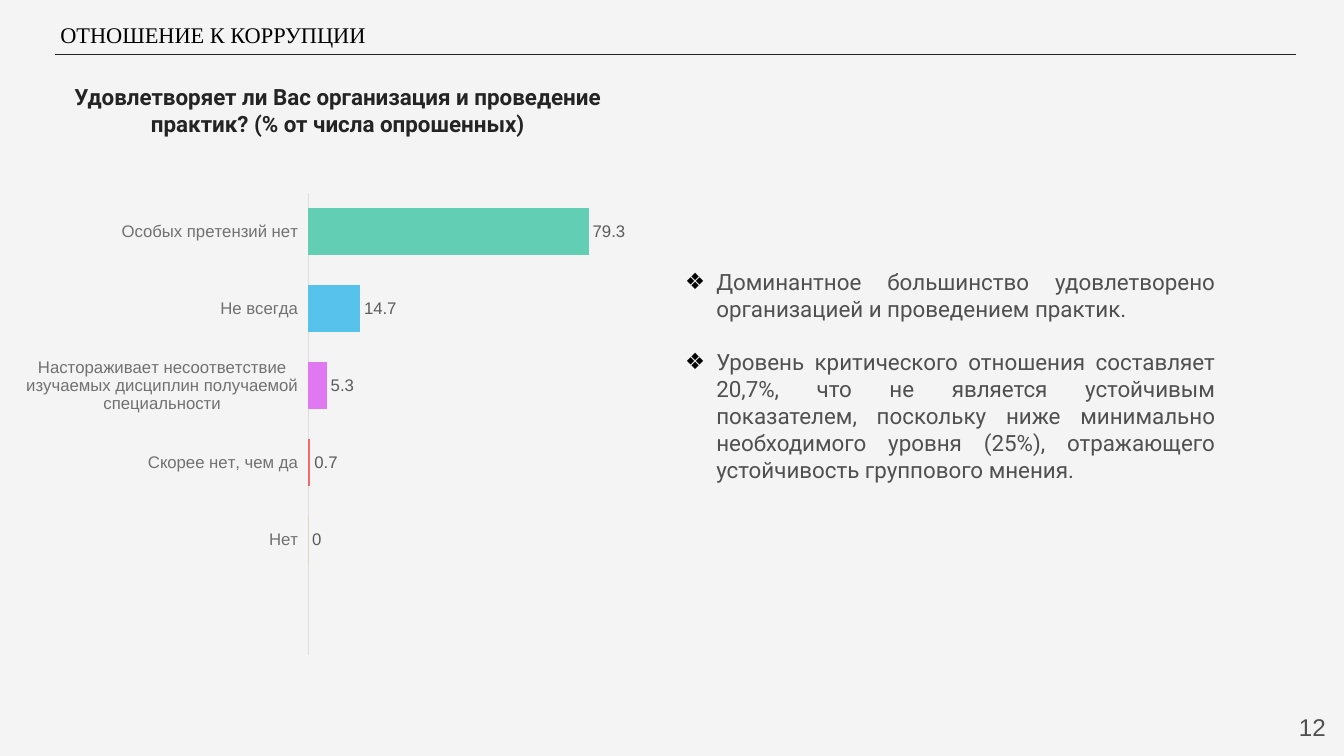
from dataclasses import dataclass
from typing import Optional

from lxml.etree import SubElement
from pptx import Presentation
from pptx.chart.data import CategoryChartData
from pptx.dml.color import RGBColor
from pptx.enum.chart import XL_CHART_TYPE, XL_LABEL_POSITION, XL_TICK_LABEL_POSITION, XL_TICK_MARK
from pptx.enum.shapes import MSO_CONNECTOR
from pptx.enum.text import MSO_ANCHOR, PP_ALIGN
from pptx.oxml import parse_xml
from pptx.oxml.ns import nsdecls, qn
from pptx.util import Inches, Pt

WIDTH, HEIGHT = Inches(13.33), Inches(7.5)
COLORS = {
    "background": "F4F4F4", "ink": "242424", "title": "000000", "body": "505050",
    "category": "717171", "value": "5B5B5B", "axis": "DEDEDE",
    "green": "62CFB5", "blue": "57C2EC", "orange": "FF9900", "red": "F7686B", "violet": "E078F1",
}


@dataclass
class Area:
    """Left, top, width and height in percent of the slide."""
    left: float
    top: float
    width: float
    height: float

    def box(self) -> tuple[int, int, int, int]:
        return across(self.left), down(self.top), across(self.width), down(self.height)


@dataclass
class TextBlock:
    area: Area
    paragraphs: list[str]
    font: str
    color: str
    align: PP_ALIGN
    size: float = 16
    bold: bool = False
    bullet: str = ""
    inset: float = 0.13
    anchor: MSO_ANCHOR = MSO_ANCHOR.TOP


@dataclass
class Answer:
    label: str
    share: Optional[float]
    color: str


TEXTS = [
    TextBlock(Area(3.75, 2.13, 94.75, 4.93), ["ОТНОШЕНИЕ К КОРРУПЦИИ"],
              "Times New Roman", "title", PP_ALIGN.LEFT, inset=0.1, anchor=MSO_ANCHOR.MIDDLE),
    TextBlock(Area(1.95, 9.33, 46.36, 10.8),
              ["Удовлетворяет ли Вас организация и проведение практик? (% от числа опрошенных)"],
              "Roboto", "ink", PP_ALIGN.CENTER, bold=True),
    TextBlock(Area(50, 33.73, 41.4, 37.33),
              ["Доминантное большинство удовлетворено организацией и проведением практик.",
               "Уровень критического отношения составляет 20,7%, что не является устойчивым "
               "показателем, поскольку ниже минимально необходимого уровня (25%), отражающего "
               "устойчивость группового мнения."],
              "Roboto", "body", PP_ALIGN.JUSTIFY, bullet="❖"),
    TextBlock(Area(93.62, 92.4, 6, 7.6), ["12"], "Arial", "body", PP_ALIGN.RIGHT,
              size=17.3, anchor=MSO_ANCHOR.MIDDLE),
]
ANSWERS = [
    Answer("", None, "blue"),
    Answer("Нет", 0, "orange"),
    Answer("Скорее нет, чем да", 0.7, "red"),
    Answer("Настораживает несоответствие изучаемых дисциплин получаемой специальности", 5.3, "violet"),
    Answer("Не всегда", 14.7, "blue"),
    Answer("Особых претензий нет", 79.3, "green"),
]
CHART_AREA = Area(1.95, 25.47, 45.31, 65.2)
PLOT_SHARES = {"x": 0.461, "y": 0.001, "w": 0.525, "h": 0.938}


def across(percent: float) -> int:
    return round(WIDTH * percent / 100)


def down(percent: float) -> int:
    return round(HEIGHT * percent / 100)


def rgb(name: str) -> RGBColor:
    return RGBColor.from_string(COLORS[name])


def style_font(font, name: str, size: float, color: str, bold: bool = False) -> None:
    font.name, font.size, font.bold = name, Pt(size), bold
    font.color.rgb = rgb(color)


def add_bullet(paragraph, symbol: str) -> None:
    properties = paragraph._p.get_or_add_pPr()
    properties.set("marL", str(Inches(0.31)))
    properties.set("indent", str(-Inches(0.31)))
    tint = SubElement(properties, qn("a:buClr"))
    SubElement(tint, qn("a:srgbClr"), val=COLORS["title"])
    SubElement(properties, qn("a:buFont"), typeface="Arial")
    SubElement(properties, qn("a:buChar"), char=symbol)


def add_text(slide, block: TextBlock) -> None:
    frame = slide.shapes.add_textbox(*block.area.box()).text_frame
    frame.word_wrap = True
    frame.vertical_anchor = block.anchor
    frame.margin_left = frame.margin_right = Inches(block.inset)
    frame.margin_top = frame.margin_bottom = Inches(min(block.inset, block.inset if block.bullet or block.inset > 0.1 else 0.05))
    for index, wording in enumerate(block.paragraphs):
        paragraph = frame.add_paragraph() if index else frame.paragraphs[0]
        paragraph.text = wording
        paragraph.alignment = block.align
        if block.bullet:
            add_bullet(paragraph, block.bullet)
        if index:
            paragraph.space_before = Pt(19)
        style_font(paragraph.font, block.font, block.size, block.color, block.bold)


def add_title_rule(slide) -> None:
    rule = slide.shapes.add_connector(
        MSO_CONNECTOR.STRAIGHT, across(4.13), down(7.2), across(96.4), down(7.2))
    rule.line.color.rgb = rgb("ink")
    rule.line.width = Pt(0.75)
    SubElement(rule._element.spPr, qn("a:effectLst"))


def place_plot(chart) -> None:
    """Fix the inner plot area at its shares of the chart."""
    plot_area = chart._chartSpace.chart.plotArea
    for automatic in plot_area.findall(qn("c:layout")):
        plot_area.remove(automatic)
    modes = "".join(f'<c:{side}Mode val="edge"/>' for side in "xy")
    shares = "".join(f'<c:{side} val="{share}"/>' for side, share in PLOT_SHARES.items())
    plot_area.insert(0, parse_xml(
        f'<c:layout {nsdecls("c")}><c:manualLayout><c:layoutTarget val="inner"/>'
        f'{modes}{shares}</c:manualLayout></c:layout>'))


def add_answer_chart(slide) -> None:
    data = CategoryChartData()
    data.categories = [answer.label for answer in ANSWERS]
    data.add_series("Series 1", [answer.share for answer in ANSWERS])
    chart = slide.shapes.add_chart(XL_CHART_TYPE.BAR_CLUSTERED, *CHART_AREA.box(), data).chart
    chart.has_title = chart.has_legend = False
    style_font(chart.font, "Arial", 12, "ink")
    place_plot(chart)

    categories, values = chart.category_axis, chart.value_axis
    categories.major_tick_mark = categories.minor_tick_mark = XL_TICK_MARK.NONE
    categories.tick_label_position = XL_TICK_LABEL_POSITION.LOW
    categories.format.line.color.rgb = rgb("axis")
    categories.format.line.width = Pt(0.75)
    style_font(categories.tick_labels.font, "Arial", 12, "category")
    values.visible = values.has_major_gridlines = False
    values.minimum_scale, values.maximum_scale = 0, 90

    plot = chart.plots[0]
    plot.gap_width = 66
    plot.vary_by_categories = False
    plot.has_data_labels = True
    plot.data_labels.show_value = True
    plot.data_labels.position = XL_LABEL_POSITION.OUTSIDE_END
    style_font(plot.data_labels.font, "Arial", 12, "value")
    for index, answer in enumerate(ANSWERS):
        fill = plot.series[0].points[index].format.fill
        fill.solid()
        fill.fore_color.rgb = rgb(answer.color)


def main() -> None:
    deck = Presentation()
    deck.slide_width, deck.slide_height = WIDTH, HEIGHT
    slide = deck.slides.add_slide(deck.slide_layouts[6])
    slide.background.fill.solid()
    slide.background.fill.fore_color.rgb = rgb("background")
    add_title_rule(slide)
    for block in TEXTS:
        add_text(slide, block)
    add_answer_chart(slide)
    deck.save("out.pptx")


if __name__ == "__main__":
    main()
